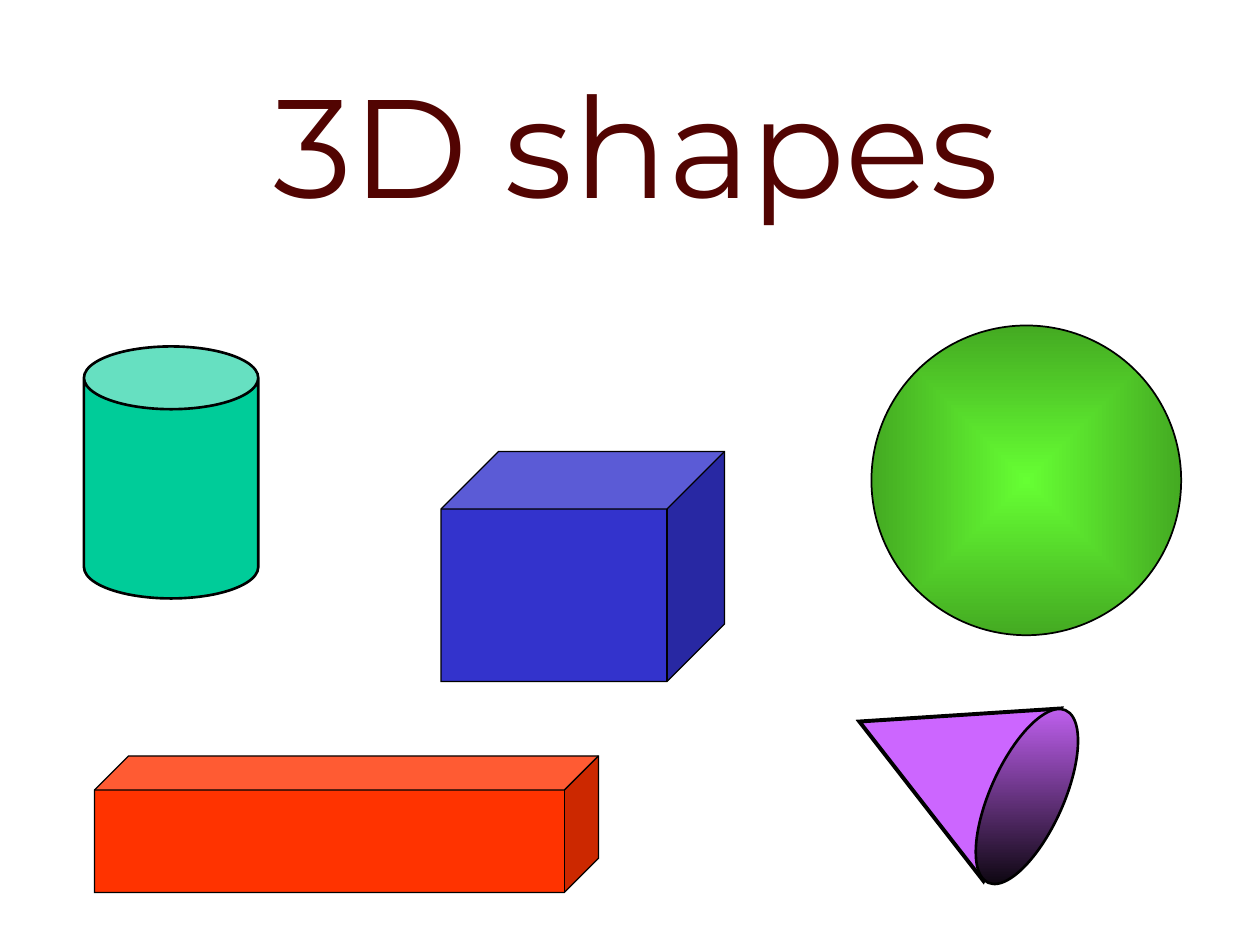
from dataclasses import dataclass

from lxml import etree
from pptx import Presentation
from pptx.dml.color import RGBColor
from pptx.enum.shapes import MSO_SHAPE
from pptx.enum.text import MSO_ANCHOR, PP_ALIGN
from pptx.oxml.ns import qn
from pptx.util import Inches, Pt

CAN, CUBE = MSO_SHAPE.CAN, MSO_SHAPE.CUBE
OVAL, CONE = MSO_SHAPE.OVAL, MSO_SHAPE.ISOSCELES_TRIANGLE
TOP, CENTER = MSO_ANCHOR.TOP, PP_ALIGN.CENTER

WIDE, HIGH = Inches(10), Inches(7.5)
COLS, ROWS = 120, 90


@dataclass(frozen=True)
class Theme:
    face: str = "Montserrat"
    size: int = 80
    title: str = "520402"
    line: str = "000000"
    teal: str = "00CC99"
    blue: str = "3333CC"
    red: str = "FF3300"
    green: tuple = ("66FF33", "44AA22")
    plum: str = "CC66FF"
    shade: tuple = ("CC66FF", "000000")


THEME = Theme()


def rgb(code):
    return RGBColor.from_string(code)


def place(box):
    x, y, w, h = box
    return [int(n) for n in (x * WIDE / COLS, y * HIGH / ROWS,
                             w * WIDE / COLS, h * HIGH / ROWS)]


def inner(box, share):
    x, y, w, h = box
    a, b, c, d = share
    return x + a * w, y + b * h, c * w, d * h


def apply(item, form):
    for key, value in form.items():
        setattr(item, key, value)


def blend(shape, tones, radial):
    fill = shape.fill
    fill.gradient()
    for stop, tone, spot in zip(fill.gradient_stops, tones, (0, 1)):
        stop.color.rgb = rgb(tone)
        stop.position = spot
    fill.gradient_angle = 270
    grad = shape.element.spPr.find(qn("a:gradFill"))
    grad.set("rotWithShape", "0")
    if radial:
        grad.remove(grad.find(qn("a:lin")))
        path = etree.SubElement(grad, qn("a:path"), path="shape")
        etree.SubElement(path, qn("a:fillToRect"),
                         {side: "50000" for side in "ltrb"})


def solid(parent, kind, box, fill, width, bend=None, turn=0, radial=False):
    shape = parent.shapes.add_shape(kind, *place(box))
    shape.shadow.inherit = False
    shape.rotation = turn
    if bend is not None:
        shape.adjustments[0] = bend
    if isinstance(fill, tuple):
        blend(shape, fill, radial)
    else:
        shape.fill.solid()
        shape.fill.fore_color.rgb = rgb(fill)
    shape.line.color.rgb = rgb(THEME.line)
    shape.line.width = Pt(width)
    edge = shape.element.spPr.find(qn("a:ln"))
    etree.SubElement(edge, qn("a:miter"), lim="800000")


def title(slide, box):
    frame = slide.shapes.add_textbox(*place(box)).text_frame
    apply(frame, {"word_wrap": False, "vertical_anchor": TOP,
                  "margin_left": 0, "margin_right": 0})
    para = frame.paragraphs[0]
    para.alignment = CENTER
    run = para.add_run()
    run.text = "3D shapes"
    apply(run.font, {"name": THEME.face, "size": Pt(THEME.size)})
    run.font.color.rgb = rgb(THEME.title)


def cone(slide, box):
    group = slide.shapes.add_group_shape()
    turn = 294.2
    solid(group, CONE, inner(box, (0, 0, 0.68, 1)), THEME.plum, 2.25, turn=turn)
    solid(group, OVAL, inner(box, (0.31, 0.51, 0.68, 0.41)), THEME.shade, 1.5,
          turn=turn)


def main():
    deck = Presentation()
    apply(deck, {"slide_width": WIDE, "slide_height": HIGH})
    slide = deck.slides.add_slide(deck.slide_layouts[6])
    title(slide, (25.2, 5, 70.8, 27.8))
    solid(slide, CAN, (8, 33, 16.6, 24), THEME.teal, 1.5, bend=0.36)
    solid(slide, CUBE, (42, 43, 27, 21.9), THEME.blue, 0.75, bend=0.25)
    solid(slide, CUBE, (9, 72, 48, 13), THEME.red, 0.75, bend=0.25)
    solid(slide, OVAL, (83, 31, 29.5, 29.5), THEME.green, 1, radial=True)
    cone(slide, (80.6, 63.7, 26.47, 17))
    deck.save("out.pptx")


if __name__ == "__main__":
    main()
